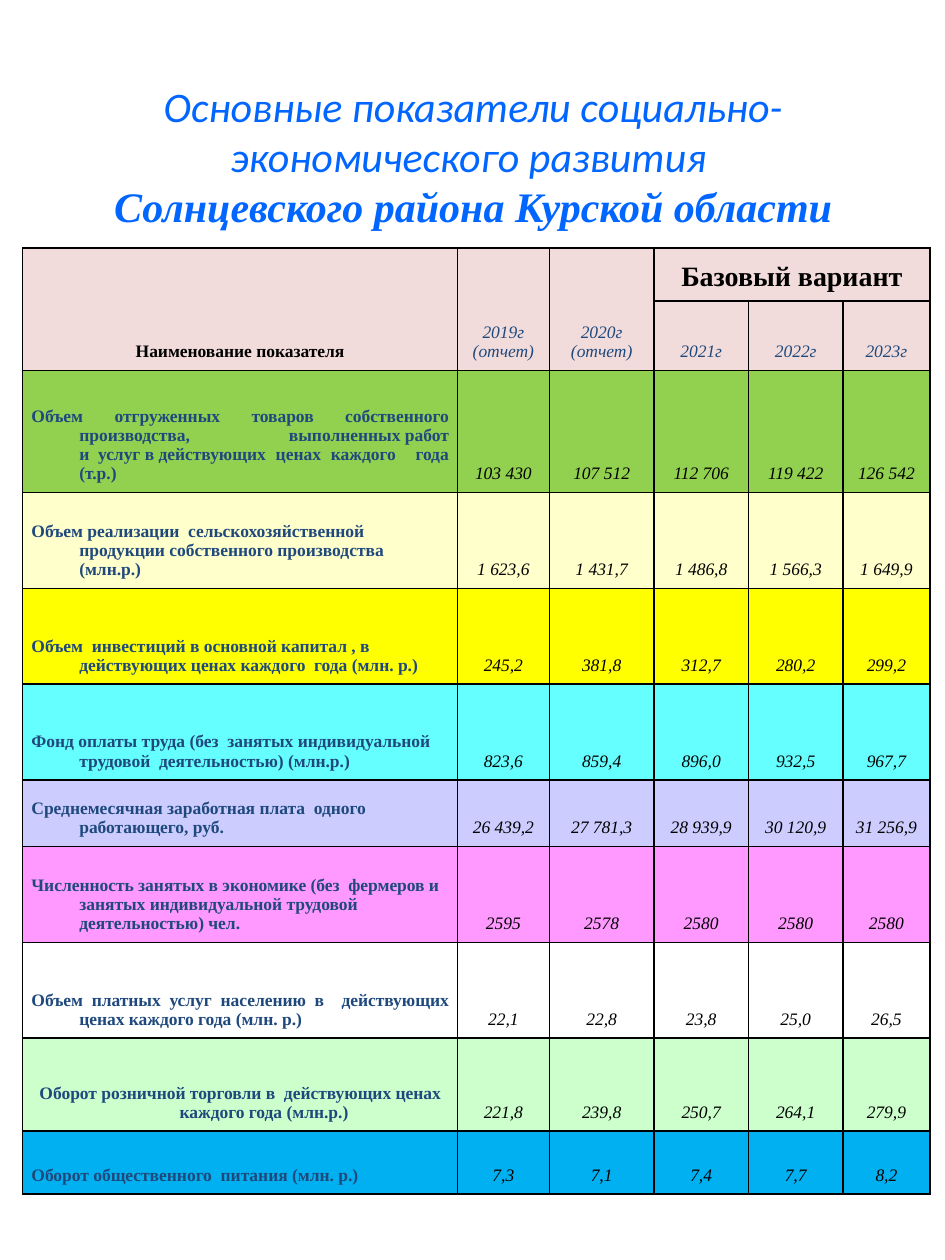
from dataclasses import dataclass

from lxml.etree import SubElement
from pptx import Presentation
from pptx.dml.color import RGBColor as Rgb
from pptx.enum.text import MSO_ANCHOR as Anchor, PP_ALIGN as Align
from pptx.oxml.ns import qn
from pptx.util import Inches, Pt


@dataclass(frozen=True)
class Theme:
    """Colours, fonts and type sizes of the slide."""
    title: str = "0066FF"
    label: str = "1F497D"
    ink: str = "000000"
    header: str = "F2DCDB"
    sans: str = "Calibri"
    serif: str = "Times New Roman"
    title_size: int = 24
    band_size: int = 16
    cell_size: int = 10
    border: int = 1


@dataclass(frozen=True)
class Style:
    """Look of one run of text."""
    color: str
    size: int
    bold: bool = False
    italic: bool = False
    font: str = "Times New Roman"


@dataclass(frozen=True)
class Indicator:
    """One row of the table; a tilde in the label ties two words."""
    label: str
    values: tuple[str, ...]
    fill: str | None
    align: Align = Align.LEFT


THEME = Theme()
LABEL = Style(THEME.label, THEME.cell_size, bold=True)
VALUE = Style(THEME.ink, THEME.cell_size, italic=True)
YEAR = Style(THEME.label, THEME.cell_size, italic=True)
HEADING = Style(THEME.ink, THEME.cell_size, bold=True)
BAND = Style(THEME.ink, THEME.band_size, bold=True)

SLIDE_SIZE = (7.5, 10)
TITLE_FRAME = (0.38, 0.4, 6.75, 1.67)
TABLE_CORNER = (0.18, 0.31)
COLUMNS = (3.45, 0.73, 0.83, 0.75, 0.45, 0.3, 0.21, 0.48)
ROWS = (0.88, 0.78, 0.42, 0.55, 0.97, 0.76, 0.76, 0.76, 0.53, 0.76, 0.76, 0.74, 0.5)
MARGIN = 0.07
HANGING = 0.38
PLAIN_STYLE = "{2D5ABB26-0587-4C30-8999-92F81FD0307C}"
BAND_ROW, YEAR_ROW, FIRST_ROW = 2, 3, 4
VALUE_COLUMNS = (1, 2, 3, 4, 6)

INDICATORS = (
    Indicator("Объем отгруженных товаров собственного производства, выполненных~работ "
              "и~~услуг~в~действующих ценах каждого  года (т.р.)",
              ("103 430", "107 512", "112 706", "119 422", "126 542"), "92D050", Align.JUSTIFY),
    Indicator("Объем реализации  сельскохозяйственной продукции собственного производства (млн.р.)",
              ("1 623,6", "1 431,7", "1 486,8", "1 566,3", "1 649,9"), "FFFFCC"),
    Indicator("Объем  инвестиций в основной капитал , в действующих ценах каждого  года (млн. р.)",
              ("245,2", "381,8", "312,7", "280,2", "299,2"), "FFFF00"),
    Indicator("Фонд оплаты труда (без  занятых индивидуальной трудовой  деятельностью) (млн.р.)",
              ("823,6", "859,4", "896,0", "932,5", "967,7"), "66FFFF"),
    Indicator("Среднемесячная заработная плата  одного работающего, руб.",
              ("26 439,2", "27 781,3", "28 939,9", "30 120,9", "31 256,9"), "CCCCFF"),
    Indicator("Численность занятых в экономике (без  фермеров и занятых индивидуальной "
              "трудовой  деятельностью) чел.",
              ("2595", "2578", "2580", "2580", "2580"), "FF99FF"),
    Indicator("Объем платных услуг населению в  действующих ценах каждого года (млн. р.)",
              ("22,1", "22,8", "23,8", "25,0", "26,5"), None, Align.JUSTIFY),
    Indicator("Оборот розничной торговли в  действующих ценах каждого года (млн.р.)",
              ("221,8", "239,8", "250,7", "264,1", "279,9"), "CCFFCC", Align.CENTER),
    Indicator("Оборот общественного  питания (млн. р.)",
              ("7,3", "7,1", "7,4", "7,7", "8,2"), "00B0F0", Align.JUSTIFY),
)


def add_span(para, text: str, style: Style) -> None:
    """Add one styled run to a paragraph."""
    span = para.add_run()
    span.text = text.replace("~", chr(160))
    font = span.font
    font.name, font.size = style.font, Pt(style.size)
    font.bold, font.italic = style.bold, style.italic
    font.color.rgb = Rgb.from_string(style.color)


def write_cell(cell, lines: tuple[str, ...], style: Style,
               align: Align = Align.CENTER, hanging: bool = False) -> None:
    """Write one paragraph per line at the foot of a cell."""
    cell.vertical_anchor = Anchor.BOTTOM
    cell.margin_left = cell.margin_right = Inches(MARGIN)
    cell.margin_top = cell.margin_bottom = Inches(MARGIN)
    frame = cell.text_frame
    for index, line in enumerate(lines):
        para = frame.add_paragraph() if index else frame.paragraphs[0]
        para.alignment = align
        if hanging:
            props = para._p.get_or_add_pPr()
            props.set("marL", str(Inches(HANGING)))
            props.set("indent", str(-Inches(HANGING)))
        add_span(para, line, style)


def paint_cell(cell, sides: str, fill: str | None) -> None:
    """Rule the given sides of a cell and set its fill."""
    props = cell._tc.get_or_add_tcPr()
    for side in sides:
        line = SubElement(props, qn(f"a:ln{side}"), w=str(Pt(THEME.border)))
        solid = SubElement(line, qn("a:solidFill"))
        SubElement(solid, qn("a:srgbClr"), val=THEME.ink)
    if fill:
        cell.fill.solid()
        cell.fill.fore_color.rgb = Rgb.from_string(fill)
    else:
        cell.fill.background()


def merge_cells(table) -> None:
    """Join the spans of the grid."""
    spans = [(0, 0, 0, 7), (1, 3, 1, 4), (1, 5, 1, 6), (BAND_ROW, 3, BAND_ROW, 7)]
    spans += [(BAND_ROW, column, YEAR_ROW, column) for column in range(3)]
    spans += [(row, column, row, column + 1)
              for row in range(YEAR_ROW, len(ROWS)) for column in (4, 6)]
    for top, left, bottom, right in spans:
        table.cell(top, left).merge(table.cell(bottom, right))


def add_title(page) -> None:
    """Place and write the title."""
    box = page.shapes.title
    box.left, box.top, box.width, box.height = map(Inches, TITLE_FRAME)
    box.text_frame.vertical_anchor = Anchor.MIDDLE
    box.text_frame.word_wrap = True
    para = box.text_frame.paragraphs[0]
    para.alignment = Align.CENTER
    add_span(para, "Основные показатели социально-экономического развития ",
             Style(THEME.title, THEME.title_size, italic=True, font=THEME.sans))
    para.add_line_break()
    add_span(para, "Солнцевского района Курской области",
             Style(THEME.title, THEME.title_size, bold=True, italic=True, font=THEME.serif))


def add_indicator_table(page) -> None:
    """Build the table of indicators."""
    left, top = TABLE_CORNER
    box = page.shapes.add_table(len(ROWS), len(COLUMNS), Inches(left), Inches(top),
                                Inches(sum(COLUMNS)), Inches(sum(ROWS)))
    table = box.table
    table.first_row = table.horz_banding = False
    table._tbl.tblPr.find(qn("a:tableStyleId")).text = PLAIN_STYLE
    for column, width in zip(table.columns, COLUMNS):
        column.width = Inches(width)
    for row, height in zip(table.rows, ROWS):
        row.height = Inches(height)

    fills = (None, None, THEME.header, THEME.header, *(item.fill for item in INDICATORS))
    sides = ("", "B") + ("LRTB",) * (len(ROWS) - 2)
    for row, fill in enumerate(fills):
        for column in range(len(COLUMNS)):
            paint_cell(table.cell(row, column), sides[row], fill)
    merge_cells(table)

    write_cell(table.cell(BAND_ROW, 0), ("Наименование показателя",), HEADING, hanging=True)
    for column, year in enumerate(("2019г", "2020г"), 1):
        write_cell(table.cell(BAND_ROW, column), (year, "(отчет)"), YEAR, hanging=True)
    write_cell(table.cell(BAND_ROW, 3), ("Базовый вариант",), BAND, hanging=True)
    for column, year in zip(VALUE_COLUMNS[2:], ("2021г", "2022г", "2023г")):
        write_cell(table.cell(YEAR_ROW, column), (year,), YEAR, hanging=True)
    for row, item in enumerate(INDICATORS, FIRST_ROW):
        write_cell(table.cell(row, 0), (item.label,), LABEL, item.align, hanging=True)
        for column, value in zip(VALUE_COLUMNS, item.values):
            write_cell(table.cell(row, column), (value,), VALUE, hanging=column < 4)


def main() -> None:
    """Build the deck and save it."""
    deck = Presentation()
    deck.slide_width, deck.slide_height = map(Inches, SLIDE_SIZE)
    page = deck.slides.add_slide(deck.slide_layouts[5])
    add_title(page)
    add_indicator_table(page)
    deck.save("out.pptx")


if __name__ == "__main__":
    main()
